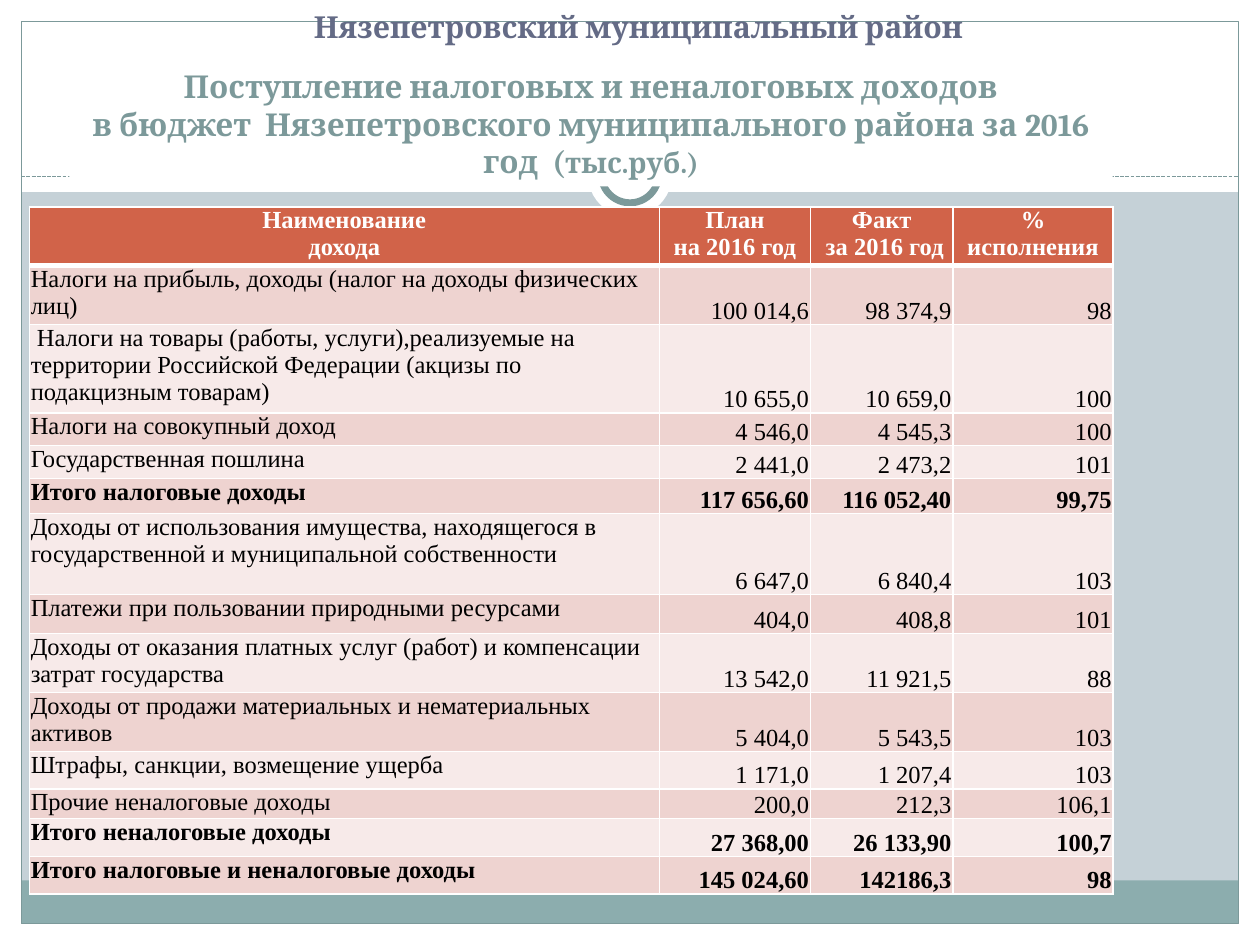
from lxml import etree
from pptx import Presentation
from pptx.dml.color import RGBColor
from pptx.enum.dml import MSO_LINE
from pptx.enum.shapes import MSO_CONNECTOR, MSO_SHAPE
from pptx.enum.text import MSO_ANCHOR, PP_ALIGN
from pptx.oxml.ns import qn
from pptx.util import Cm, Pt

RECTANGLE, OVAL = MSO_SHAPE.RECTANGLE, MSO_SHAPE.OVAL
STRAIGHT = MSO_CONNECTOR.STRAIGHT
DASHED = MSO_LINE.SQUARE_DOT
LEFT, CENTER, RIGHT = PP_ALIGN.LEFT, PP_ALIGN.CENTER, PP_ALIGN.RIGHT
TOP, MIDDLE, BOTTOM = MSO_ANCHOR.TOP, MSO_ANCHOR.MIDDLE, MSO_ANCHOR.BOTTOM

WHITE = RGBColor(0xFF, 0xFF, 0xFF)
BLACK = RGBColor(0x00, 0x00, 0x00)
PALE_BLUE = RGBColor(0xC5, 0xD1, 0xD7)
TEAL = RGBColor(0x8C, 0xAD, 0xAE)
DARK_TEAL = RGBColor(0x7C, 0x99, 0x9A)
SLATE = RGBColor(0x64, 0x6B, 0x86)
RUST = RGBColor(0xD1, 0x63, 0x49)
ROW_FILLS = (RGBColor(0xEE, 0xD3, 0xD0), RGBColor(0xF7, 0xEA, 0xE9))

WIDTH, HEIGHT = 25.4, 19.05
MARGIN = 0.43
COLUMN_WIDTHS = (12.7, 3.05, 2.87, 3.23)
ROW_HEIGHTS = (1.14, 1.17, 1.73, 0.66, 0.66, 0.71, 1.63,
               0.79, 1.17, 1.17, 0.76, 0.58, 0.76, 0.76)
HEADER = ("Наименование\nдохода", "План\nна 2016 год",
          "Факт\n за 2016 год", "%\nисполнения")
INCOME = (
    ("Налоги на прибыль, доходы (налог на доходы физических лиц)",
     "100 014,6", "98 374,9", "98"),
    (" Налоги на товары (работы, услуги),реализуемые на территории "
     "Российской Федерации (акцизы по подакцизным товарам)",
     "10 655,0", "10 659,0", "100"),
    ("Налоги на совокупный доход", "4 546,0", "4 545,3", "100"),
    ("Государственная пошлина", "2 441,0", "2 473,2", "101"),
    ("Итого налоговые доходы", "117 656,60", "116 052,40", "99,75"),
    ("Доходы от использования имущества, находящегося в "
     "государственной и муниципальной собственности",
     "6 647,0", "6 840,4", "103"),
    ("Платежи при пользовании природными ресурсами",
     "404,0", "408,8", "101"),
    ("Доходы от оказания платных услуг (работ) и компенсации "
     "затрат государства", "13 542,0", "11 921,5", "88"),
    ("Доходы от продажи материальных и нематериальных активов",
     "5 404,0", "5 543,5", "103"),
    ("Штрафы, санкции, возмещение ущерба", "1 171,0", "1 207,4", "103"),
    ("Прочие неналоговые доходы", "200,0", "212,3", "106,1"),
    ("Итого неналоговые доходы", "27 368,00", "26 133,90", "100,7"),
    ("Итого налоговые и неналоговые доходы",
     "145 024,60", "142186,3", "98"),
)


class SlideBuilder:
    heading_font = "Cambria"
    table_font = "Times New Roman"
    table_size = 14

    def __init__(self, slide):
        self.slide = slide

    def background(self, color):
        self.slide.background.fill.solid()
        self.slide.background.fill.fore_color.rgb = color

    def shape(self, preset, box, fill=None, line=None, weight=0.75):
        shape = self.slide.shapes.add_shape(preset, *map(Cm, box))
        shape.shadow.inherit = False
        if fill is None:
            shape.fill.background()
        else:
            shape.fill.solid()
            shape.fill.fore_color.rgb = fill
        if line is None:
            shape.line.fill.background()
        else:
            shape.line.color.rgb = line
            shape.line.width = Pt(weight)

    def dashed_line(self, left, right, y, color):
        line = self.slide.shapes.add_connector(
            STRAIGHT, Cm(left), Cm(y), Cm(right), Cm(y))
        line.line.color.rgb = color
        line.line.width = Pt(0.75)
        line.line.dash_style = DASHED
        etree.SubElement(line._element.spPr, qn("a:effectLst"))

    def heading(self, box, pieces, color, anchor, fill=None, spacing=1.0):
        """Centred bold text made of (text, size) pieces."""
        heading = self.slide.shapes.add_textbox(*map(Cm, box))
        if fill is not None:
            heading.fill.solid()
            heading.fill.fore_color.rgb = fill
        frame = heading.text_frame
        frame.word_wrap = True
        frame.vertical_anchor = anchor
        paragraph = frame.paragraphs[0]
        paragraph.alignment = CENTER
        paragraph.line_spacing = spacing
        for text, size in pieces:
            for index, part in enumerate(text.split("\n")):
                if index:
                    paragraph.add_line_break()
                run = paragraph.add_run()
                run.text = part
                self.style(run.font, self.heading_font, size, color, True)

    def style(self, font, name, size, color, bold):
        font.name, font.size, font.bold = name, Pt(size), bold
        font.color.rgb = color

    def borders(self, cell, top, bottom):
        """White cell edges; top and bottom widths are in points."""
        properties = cell._tc.get_or_add_tcPr()
        for side, weight in zip("LRTB", (1, 1, top, bottom)):
            edge = etree.SubElement(
                properties, qn(f"a:ln{side}"), w=str(Pt(weight)))
            solid = etree.SubElement(edge, qn("a:solidFill"))
            etree.SubElement(solid, qn("a:srgbClr"), val=str(WHITE))

    def cell(self, cell, text, fill, color, bold, align, anchor):
        cell.fill.solid()
        cell.fill.fore_color.rgb = fill
        cell.margin_left = cell.margin_right = Cm(0.03)
        cell.margin_top = cell.margin_bottom = Cm(0)
        cell.vertical_anchor = anchor
        cell.text_frame.text = text
        for paragraph in cell.text_frame.paragraphs:
            paragraph.alignment = align
            for run in paragraph.runs:
                self.style(run.font, self.table_font, self.table_size,
                           color, bold)

    def table(self, left, top, header, rows, widths, heights):
        table = self.slide.shapes.add_table(
            len(heights), len(widths), Cm(left), Cm(top),
            Cm(sum(widths)), Cm(sum(heights))).table
        for column, width in zip(table.columns, widths):
            column.width = Cm(width)
        for row, height in zip(table.rows, heights):
            row.height = Cm(height)
        for c, title in enumerate(header):
            self.borders(table.cell(0, c), 1, 3)
            self.cell(table.cell(0, c), title, RUST, WHITE, True, CENTER, TOP)
        for r, values in enumerate(rows, 1):
            fill = ROW_FILLS[(r - 1) % 2]
            total = values[0].startswith("Итого")
            for c, value in enumerate(values):
                align, anchor = (RIGHT, BOTTOM) if c else (LEFT, TOP)
                self.borders(table.cell(r, c), 3 if r == 1 else 1, 1)
                self.cell(table.cell(r, c), value, fill, BLACK, total,
                          align, anchor)


def main():
    deck = Presentation()
    deck.slide_width, deck.slide_height = Cm(WIDTH), Cm(HEIGHT)
    builder = SlideBuilder(deck.slides.add_slide(deck.slide_layouts[6]))
    inner_width, inner_height = WIDTH - 2 * MARGIN, HEIGHT - 2 * MARGIN

    builder.background(PALE_BLUE)
    for band in ((0, HEIGHT - MARGIN, WIDTH, MARGIN),
                 (0, 0, WIDTH, 3.87),
                 (0, 0, MARGIN, HEIGHT),
                 (WIDTH - MARGIN, 0, MARGIN, HEIGHT)):
        builder.shape(RECTANGLE, band, WHITE)
    builder.shape(RECTANGLE, (MARGIN, 17.75, inner_width, 0.87), TEAL)
    builder.shape(RECTANGLE, (MARGIN, MARGIN, inner_width, inner_height),
                  line=DARK_TEAL)
    builder.dashed_line(MARGIN, WIDTH - MARGIN, 3.56, DARK_TEAL)
    builder.shape(OVAL, (11.85, 2.67, 1.7, 1.7), WHITE)
    builder.shape(OVAL, (12.12, 2.93, 1.16, 1.16), WHITE, DARK_TEAL, 4)

    builder.heading(
        (1.4, 0.99, 21.03, 2.77),
        (("Поступление налоговых и неналоговых доходов\nв бюджет  "
          "Нязепетровского муниципального района за 2016 год  (", 18),
         ("тыс.руб.)", 16.2)),
        DARK_TEAL, BOTTOM, fill=WHITE)
    builder.table(0.59, 4.17, HEADER, INCOME, COLUMN_WIDTHS, ROW_HEIGHTS)
    builder.heading((4.05, 0, 17.65, 1.19),
                    (("Нязепетровский муниципальный район", 17.3),),
                    SLATE, MIDDLE, spacing=0.8)
    deck.save("out.pptx")


if __name__ == "__main__":
    main()
